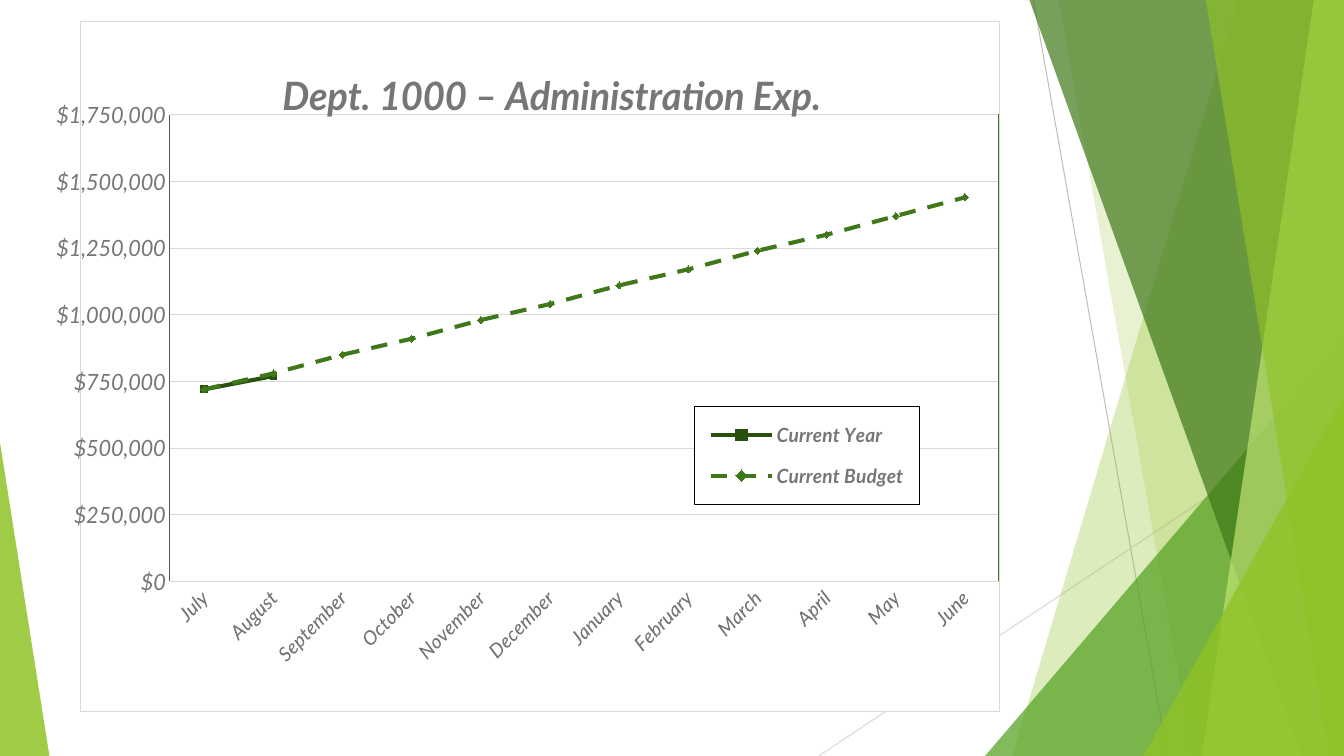
from lxml import etree
from pptx import Presentation
from pptx.chart.data import CategoryChartData
from pptx.dml.color import RGBColor
from pptx.enum.chart import XL_CHART_TYPE, XL_LEGEND_POSITION, XL_MARKER_STYLE, XL_TICK_MARK
from pptx.enum.dml import MSO_LINE
from pptx.enum.shapes import MSO_CONNECTOR, MSO_SHAPE
from pptx.oxml import parse_xml
from pptx.oxml.ns import nsdecls, qn
from pptx.util import Inches, Pt

GRAY, PALE, LIME, GREEN = "767676", "D9D9D9", "90C226", "3F7819"


def rgb(color):
    return RGBColor.from_string(color)


def set_layout(element, index, x, y, w=None, h=None, inner=False):
    """Place a chart part by fractions of the chart area."""
    for old in element.findall(qn("c:layout")):
        element.remove(old)
    layout = parse_xml(f'<c:layout {nsdecls("c")}><c:manualLayout/></c:layout>')
    values = [("layoutTarget", "inner")] if inner else []
    values += [("xMode", "edge"), ("yMode", "edge"), ("x", x), ("y", y), ("w", w), ("h", h)]
    for tag, value in values:
        if value is not None:
            etree.SubElement(layout[0], qn(f"c:{tag}")).set("val", str(value))
    element.insert(index, layout)


prs = Presentation()
prs.slide_width, prs.slide_height = Inches(13.33), Inches(7.5)
slide = prs.slides.add_slide(prs.slide_layouts[6])
shapes = slide.shapes

# Thin lines: two behind the facets, one at the right edge of the plot
lines = []
for x1, y1, x2, y2, color in [
    (10.25, 0, 11.58, 7.5, "BFBFBF"),
    (13.33, 4.03, 8.12, 7.5, PALE),
    (9.9, 1.13, 9.9, 5.76, GREEN),
]:
    line = shapes.add_connector(
        MSO_CONNECTOR.STRAIGHT, Inches(x1), Inches(y1), Inches(x2), Inches(y2))
    line.line.color.rgb = rgb(color)
    line.line.width = Pt(0.75)
    etree.SubElement(line._element.spPr, qn("a:effectLst"))
    lines.append(line)
plot_edge = lines[-1]

# Facets: (top left x, bottom left x) bands reach the right edge,
# (left, top, width, height, apex) triangles reach the bottom edge
facets = [
    ((12.28, 10.04), LIME, 30),
    ((10.5, 11.83), LIME, 20),
    ((9.77, 3.33, 3.56, 4.17, 1), "54A021", 72),
    ((10.21, 12.91), GREEN, 70),
    ((13.03, 11.92), "C0E474", 70),
    ((11.96, 13.18), LIME, 65),
    ((11.34, 3.93, 1.99, 3.57, 1), LIME, 80),
    ((0, 4.39, 0.49, 3.11, 0), LIME, 85),
]
for geometry, color, opacity in facets:
    if len(geometry) == 2:
        top, bottom = geometry
        builder = shapes.build_freeform(Inches(top), 0)
        corners = [(13.33, 0), (13.33, 7.5), (bottom, 7.5)]
        builder.add_line_segments([(Inches(x), Inches(y)) for x, y in corners])
        sp = builder.convert_to_shape()
    else:
        *box, apex = geometry
        sp = shapes.add_shape(MSO_SHAPE.ISOSCELES_TRIANGLE, *map(Inches, box))
        sp.adjustments[0] = apex
    sp.shadow.inherit = False
    sp.line.fill.background()
    sp.fill.solid()
    sp.fill.fore_color.rgb = rgb(color)
    clr = sp._element.spPr.find(".//" + qn("a:srgbClr"))
    etree.SubElement(clr, qn("a:alpha")).set("val", str(opacity * 1000))

# Chart data
data = CategoryChartData()
data.categories = ["July", "August", "September", "October", "November", "December",
                   "January", "February", "March", "April", "May", "June"]
data.add_series("Current Year", [720000, 770000] + [None] * 10)
data.add_series("Current Budget", [720000, 780000, 850000, 910000, 980000, 1040000,
                                   1110000, 1170000, 1240000, 1300000, 1370000, 1440000])
chart = shapes.add_chart(XL_CHART_TYPE.LINE_MARKERS, Inches(0.56), Inches(0.21),
                         Inches(9.36), Inches(6.85), data).chart
chart.font.name = "Calibri"
chart.font.size = Pt(10)
set_layout(chart._chartSpace.chart.plotArea, 0, 0.14, 0.135, 0.903, 0.677, inner=True)

# Title
tf = chart.chart_title.text_frame
r = tf.paragraphs[0].add_run()
r.text = "Dept. 1000 – Administration Exp."
set_layout(chart.chart_title._element, 1, 0.212, 0.055)
chart.chart_title.include_in_layout = False

# Legend
chart.has_legend = True
legend = chart.legend
legend.position = XL_LEGEND_POSITION.BOTTOM
legend.include_in_layout = False
set_layout(legend._element, 1, 0.668, 0.558, 0.245, 0.142)

# Axes
months, dollars = chart.category_axis, chart.value_axis
for axis, color in [(months, PALE), (dollars, "595959")]:
    axis.major_tick_mark = axis.minor_tick_mark = XL_TICK_MARK.NONE
    axis.format.line.color.rgb = rgb(color)
    axis.format.line.width = Pt(0.75)
dollars.minimum_scale, dollars.maximum_scale, dollars.major_unit = 0, 1750000, 250000
dollars.tick_labels.number_format = '"$"#,##0'
dollars.tick_labels.number_format_is_linked = False
dollars.major_gridlines.format.line.color.rgb = rgb(PALE)
dollars.major_gridlines.format.line.width = Pt(0.75)

# Fonts
for font, size, bold in [
    (r.font, 28, True),
    (legend.font, 14, True),
    (months.tick_labels.font, 14, False),
    (dollars.tick_labels.font, 16, False),
]:
    font.name, font.size, font.bold, font.italic = "Lato", Pt(size), bold, True
    font.color.rgb = rgb(GRAY)
months._element.find(qn("c:txPr")).find(qn("a:bodyPr")).set("rot", "-2700000")

# Series
styles = [("2A5010", MSO_LINE.SOLID, XL_MARKER_STYLE.SQUARE),
          (GREEN, MSO_LINE.DASH, XL_MARKER_STYLE.DIAMOND)]
for series, (color, dash, symbol) in zip(chart.plots[0].series, styles):
    series.smooth = False
    series.format.line.color.rgb = rgb(color)
    series.format.line.width = Pt(3)
    series.format.line.dash_style = dash
    series.marker.style, series.marker.size = symbol, 5
    series.marker.format.fill.solid()
    series.marker.format.fill.fore_color.rgb = rgb(color)
    series.marker.format.line.color.rgb = rgb(color)

# White panels with a thin border: chart area and legend
for before, color in [(chart._chartSpace.chart, PALE),
                      (legend._element.find(qn("c:overlay")), "000000")]:
    before.addnext(parse_xml(
        f'<c:spPr {nsdecls("c", "a")}>'
        '<a:solidFill><a:srgbClr val="FFFFFF"/></a:solidFill>'
        f'<a:ln w="9525"><a:solidFill><a:srgbClr val="{color}"/></a:solidFill></a:ln>'
        '</c:spPr>'))

# Bring the plot edge above the chart
shapes._spTree.append(plot_edge._element)

prs.save("out.pptx")
